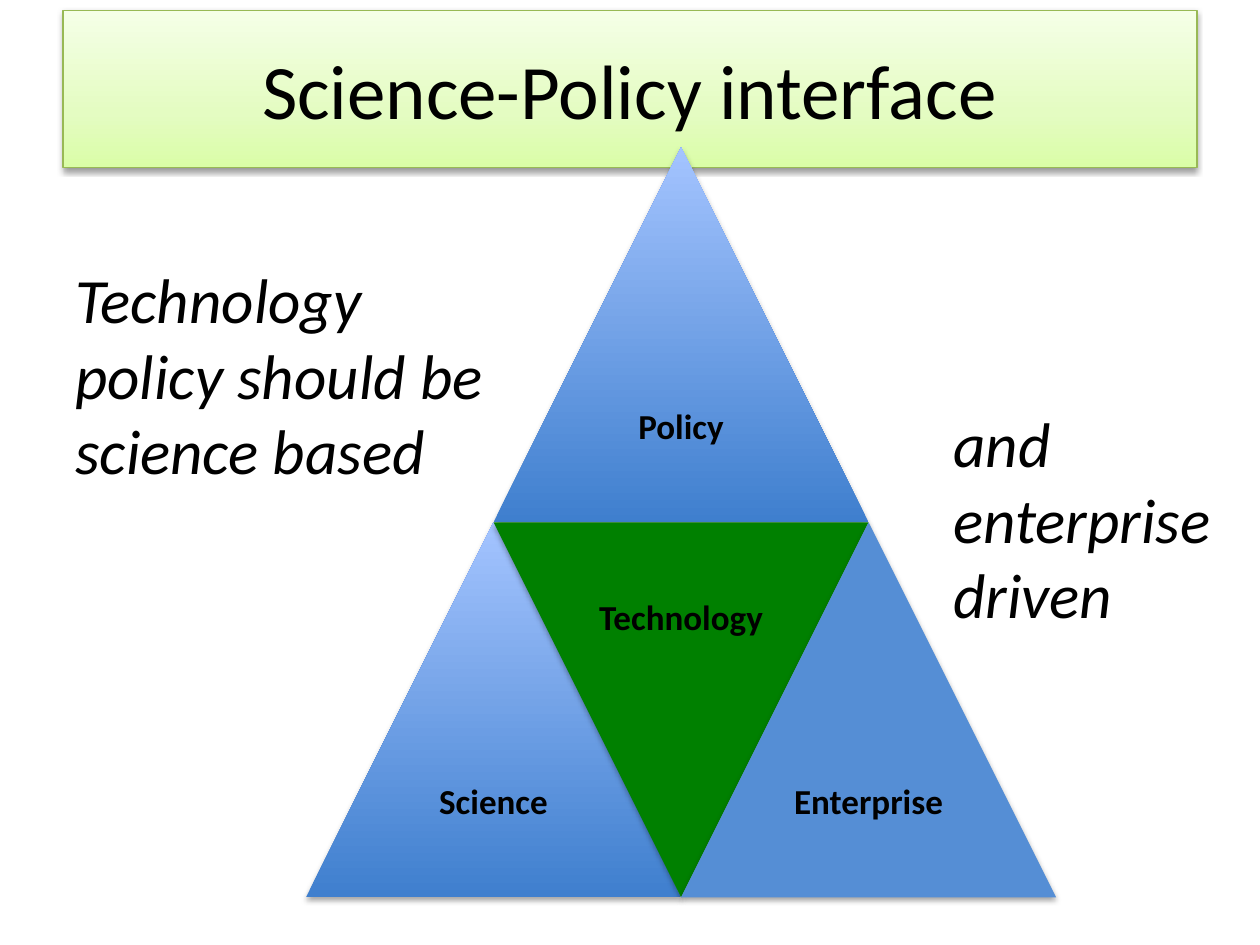
from copy import deepcopy

from lxml import etree
from pptx import Presentation
from pptx.dml.color import RGBColor
from pptx.enum.shapes import MSO_SHAPE
from pptx.enum.text import MSO_ANCHOR, MSO_AUTO_SIZE, PP_ALIGN
from pptx.oxml.ns import qn
from pptx.util import Cm, Pt

RECTANGLE = MSO_SHAPE.RECTANGLE
TRIANGLE = MSO_SHAPE.ISOSCELES_TRIANGLE
MIDDLE, TOP = MSO_ANCHOR.MIDDLE, MSO_ANCHOR.TOP
CENTER, LEFT = PP_ALIGN.CENTER, PP_ALIGN.LEFT
FIT_SHAPE = MSO_AUTO_SIZE.SHAPE_TO_FIT_TEXT


def paint(shape, stops, shadow_distance, shadow_opacity):
    fill = shape.fill
    if len(stops) == 1:
        fill.solid()
        fill.fore_color.rgb = RGBColor.from_string(stops[0][1])
    else:
        fill.gradient()
        fill.gradient_angle = 90
        stop_list = shape.element.spPr.find(".//" + qn("a:gsLst"))
        while len(stop_list) < len(stops):
            stop_list.append(deepcopy(stop_list[-1]))
        for stop, (position, color) in zip(fill.gradient_stops, stops):
            stop.position = position
            stop.color.rgb = RGBColor.from_string(color)
    shape.shadow.inherit = False
    effects = shape.element.spPr.find(qn("a:effectLst"))
    shadow = etree.SubElement(effects, qn("a:outerShdw"), {
        "blurRad": str(Pt(3.1)), "dist": str(Pt(shadow_distance)),
        "dir": "5400000", "rotWithShape": "0"})
    shade = etree.SubElement(shadow, qn("a:srgbClr"), val="000000")
    etree.SubElement(shade, qn("a:alpha"), val=str(shadow_opacity * 1000))


def write(shape, text, align, anchor, font, spacing=1.0):
    frame = shape.text_frame
    frame.word_wrap = True
    frame.vertical_anchor = anchor
    para = frame.paragraphs[0]
    para.alignment = align
    para.line_spacing = spacing
    span = para.add_run()
    span.text = text
    span.font.color.rgb = RGBColor.from_string("000000")
    for name, value in {"name": "Calibri", **font}.items():
        setattr(span.font, name, value)


deck = Presentation()
deck.slide_width, deck.slide_height = Cm(25.4), Cm(19.05)
page = deck.slides.add_slide(deck.slide_layouts[6])

title = page.shapes.add_shape(RECTANGLE, Cm(1.27), Cm(0.21), Cm(22.86), Cm(3.17))
paint(title, [(0, "DAFDA7"), (0.35, "E4FCC2"), (1, "F5FFE7")], 1.6, 38)
title.line.color.rgb = RGBColor.from_string("98B955")
title.line.width = Pt(0.75)
write(title, "Science-Policy interface", CENTER, MIDDLE, {"size": Pt(44)})

half = 3.78
pyramid_left, pyramid_top = 6.17, 2.97
blue = [(0, "3F7FCE"), (1, "A4C4FF")]
parts = [
    ("Policy", 1, 0, 0, blue, 0.9),
    ("Science", 0, 2, 0, blue, 0.9),
    ("Technology", 1, 2, 180, [(0, "008000")], 1.0),
    ("Enterprise", 2, 2, 0, [(0, "558ED5")], 0.9),
]
pyramid = page.shapes.add_group_shape()
for text, column, row, rotation, stops, spacing in parts:
    left = pyramid_left + column * half
    top = pyramid_top + row * half
    triangle = pyramid.shapes.add_shape(
        TRIANGLE, Cm(left), Cm(top), Cm(2 * half), Cm(2 * half))
    triangle.rotation = rotation
    triangle.line.fill.background()
    paint(triangle, stops, 1.8, 35)
    label_top = top if rotation else top + half
    label = pyramid.shapes.add_textbox(
        Cm(left + half / 2), Cm(label_top), Cm(half), Cm(half))
    for side in ("left", "top", "right", "bottom"):
        setattr(label.text_frame, f"margin_{side}", Cm(0.2))
    write(label, text, CENTER, MIDDLE, {"size": Pt(20), "bold": True}, spacing)

statements = [
    ("Technology policy should be science based", 1.27, 5.13, 9.02),
    ("and enterprise driven", 18.97, 8.03, 6.1),
]
for text, left, top, width in statements:
    box = page.shapes.add_textbox(Cm(left), Cm(top), Cm(width), Cm(4.88))
    box.text_frame.auto_size = FIT_SHAPE
    write(box, text, LEFT, TOP, {"size": Pt(36), "italic": True})

deck.save("out.pptx")
